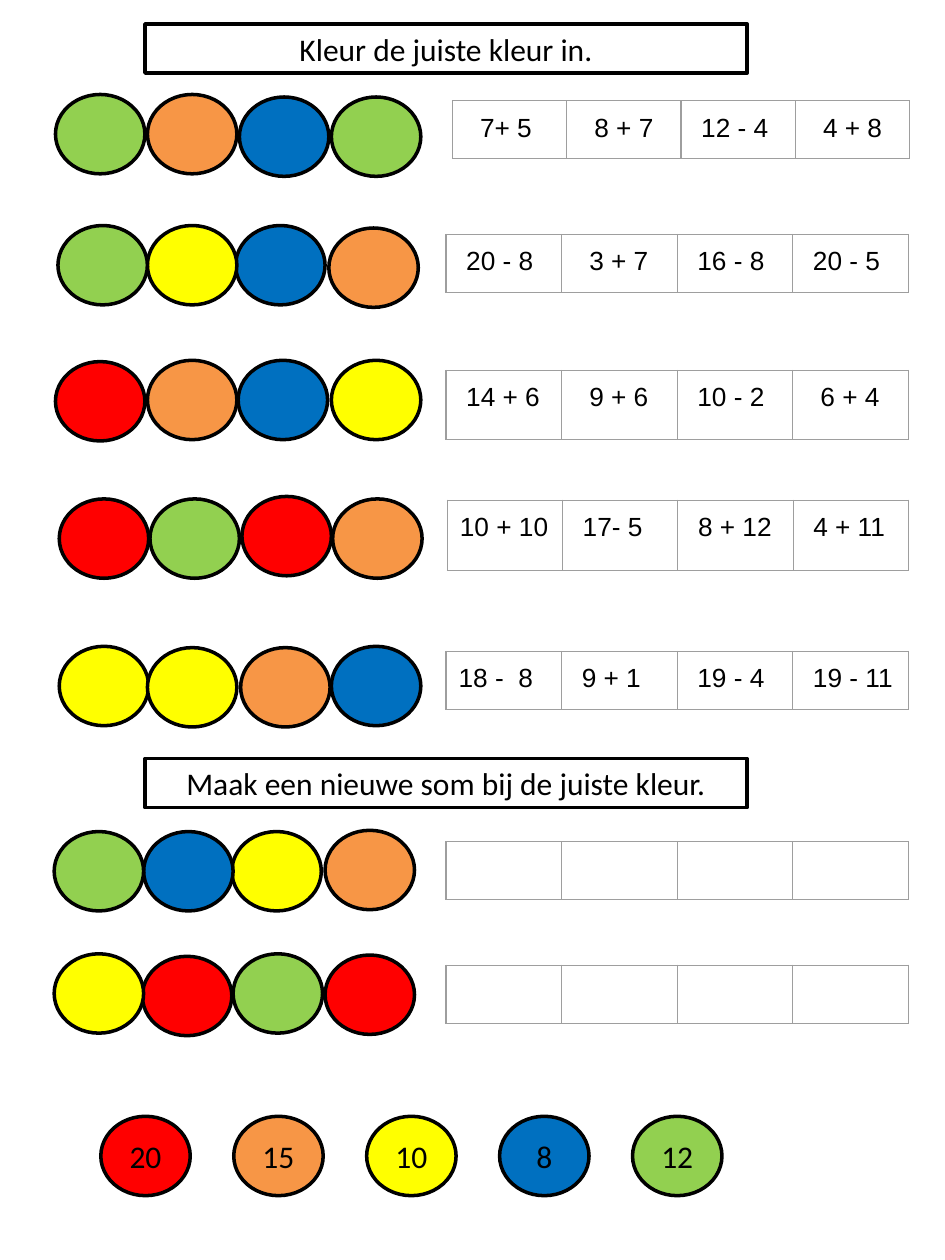
from pptx import Presentation
from pptx.dml.color import RGBColor
from pptx.enum.shapes import MSO_SHAPE
from pptx.enum.text import MSO_ANCHOR, PP_ALIGN
from pptx.oxml import parse_xml
from pptx.oxml.ns import nsdecls
from pptx.util import Inches, Pt

BLACK = RGBColor(0x00, 0x00, 0x00)
WHITE = RGBColor(0xFF, 0xFF, 0xFF)
GREEN = RGBColor(0x92, 0xD0, 0x50)
ORANGE = RGBColor(0xF7, 0x96, 0x46)
BLUE = RGBColor(0x00, 0x70, 0xC0)
YELLOW = RGBColor(0xFF, 0xFF, 0x00)
RED = RGBColor(0xFF, 0x00, 0x00)
BORDER = RGBColor(0x9E, 0x9E, 0x9E)

LABEL_FORMAT = {"name": "Calibri", "size": Pt(18)}
SUM_FORMAT = {"name": "Arial", "size": Pt(15), "bold": False}
CELL_MARGIN = 0.1
INDENT_STEP = 0.06

# Circles of each row: left, top, colour, in drawing order
CIRCLE_ROWS = [
    [(0.44, 0.75, GREEN), (1.17, 0.75, ORANGE), (1.9, 0.77, BLUE), (2.63, 0.77, GREEN)],
    [(1.87, 1.79, BLUE), (2.61, 1.81, ORANGE), (1.17, 1.79, YELLOW), (0.46, 1.79, GREEN)],
    [(1.89, 2.86, BLUE), (2.63, 2.86, YELLOW), (1.17, 2.86, ORANGE), (0.44, 2.87, RED)],
    [(0.47, 3.96, RED), (1.19, 3.96, GREEN), (1.92, 3.94, RED), (2.64, 3.96, ORANGE)],
    [(0.47, 5.13, YELLOW), (1.17, 5.14, YELLOW), (1.91, 5.14, ORANGE), (2.63, 5.13, BLUE)],
    [(2.58, 6.59, ORANGE), (1.84, 6.6, YELLOW), (1.14, 6.6, BLUE), (0.43, 6.6, GREEN)],
    [(2.58, 7.58, RED), (1.85, 7.57, GREEN), (1.13, 7.59, RED), (0.43, 7.57, YELLOW)],
]

# Tables: left, top, width, height, then (sum, indent steps) per cell
EMPTY_SUMS = [("", 0)] * 4
SUM_TABLES = [
    (3.59, 0.8, 3.63, 0.46, [("7+ 5", 2), ("8 + 7", 2), ("12 - 4", 1), ("4 + 8", 2)]),
    (3.54, 1.86, 3.67, 0.46, [("20 - 8", 1), ("3 + 7", 2), ("16 - 8", 1), ("20 - 5", 1)]),
    (3.54, 2.94, 3.67, 0.55, [("14 + 6", 1), ("9 + 6", 2), ("10 - 2", 1), ("6 + 4", 2)]),
    (3.55, 3.97, 3.66, 0.56, [("10 + 10", 0), ("17- 5", 1), ("8 + 12", 1), ("4 + 11", 1)]),
    (3.54, 5.17, 3.67, 0.46, [("18 -  8", 0), ("9 + 1", 1), ("19 - 4", 1), ("19 - 11", 1)]),
    (3.54, 6.68, 3.67, 0.46, EMPTY_SUMS),
    (3.54, 7.66, 3.67, 0.46, EMPTY_SUMS),
]

HEADINGS = [
    (0.19, "Kleur de juiste kleur in."),
    (6.02, "Maak een nieuwe som bij de juiste kleur."),
]
LEGEND = [("20", RED), ("15", ORANGE), ("10", YELLOW), ("8", BLUE), ("12", GREEN)]


def write_text(paragraph, text, text_format):
    run = paragraph.add_run()
    run.text = text
    for name, value in text_format.items():
        setattr(run.font, name, value)
    run.font.color.rgb = BLACK


def add_outlined_shape(slide, kind, box, color, text=""):
    shape = slide.shapes.add_shape(kind, *map(Inches, box))
    shape.shadow.inherit = False
    shape.fill.solid()
    shape.fill.fore_color.rgb = color
    shape.line.color.rgb = BLACK
    shape.line.width = Pt(2)
    if text:
        shape.text_frame.vertical_anchor = MSO_ANCHOR.MIDDLE
        paragraph = shape.text_frame.paragraphs[0]
        paragraph.alignment = PP_ALIGN.CENTER
        write_text(paragraph, text, LABEL_FORMAT)


def add_circle(slide, left, top, color, text=""):
    add_outlined_shape(slide, MSO_SHAPE.OVAL, (left, top, 0.71, 0.63), color, text)


def add_cell_borders(cell):
    properties = cell._tc.get_or_add_tcPr()
    for index, side in enumerate(("lnL", "lnR", "lnT", "lnB")):
        border = parse_xml(
            f'<a:{side} {nsdecls("a")} w="{Pt(0.75)}"><a:solidFill>'
            f'<a:srgbClr val="{BORDER}"/></a:solidFill></a:{side}>')
        properties.insert(index, border)


def add_sum_table(slide, left, top, width, height, sums):
    box = map(Inches, (left, top, width, height))
    table = slide.shapes.add_table(1, len(sums), *box).table
    table.first_row = False
    table.horz_banding = False
    for cell, (text, steps) in zip(table.iter_cells(), sums):
        cell.fill.background()
        add_cell_borders(cell)
        if text:
            for side in ("right", "top", "bottom"):
                setattr(cell, f"margin_{side}", Inches(CELL_MARGIN))
            cell.margin_left = Inches(CELL_MARGIN + steps * INDENT_STEP)
            write_text(cell.text_frame.paragraphs[0], text, SUM_FORMAT)


def main():
    presentation = Presentation()
    presentation.slide_width = Inches(7.5)
    presentation.slide_height = Inches(10)
    slide = presentation.slides.add_slide(presentation.slide_layouts[6])

    # Exercise rows: coloured circles and their sums
    for circles, sum_table in zip(CIRCLE_ROWS, SUM_TABLES):
        for circle in circles:
            add_circle(slide, *circle)
        add_sum_table(slide, *sum_table)

    # Instructions
    for top, text in HEADINGS:
        add_outlined_shape(slide, MSO_SHAPE.RECTANGLE, (1.15, top, 4.78, 0.39), WHITE, text)

    # Colour key with the answers
    for index, (answer, color) in enumerate(LEGEND):
        add_circle(slide, 0.8 + index * 1.055, 8.86, color, answer)

    presentation.save("out.pptx")


if __name__ == "__main__":
    main()
